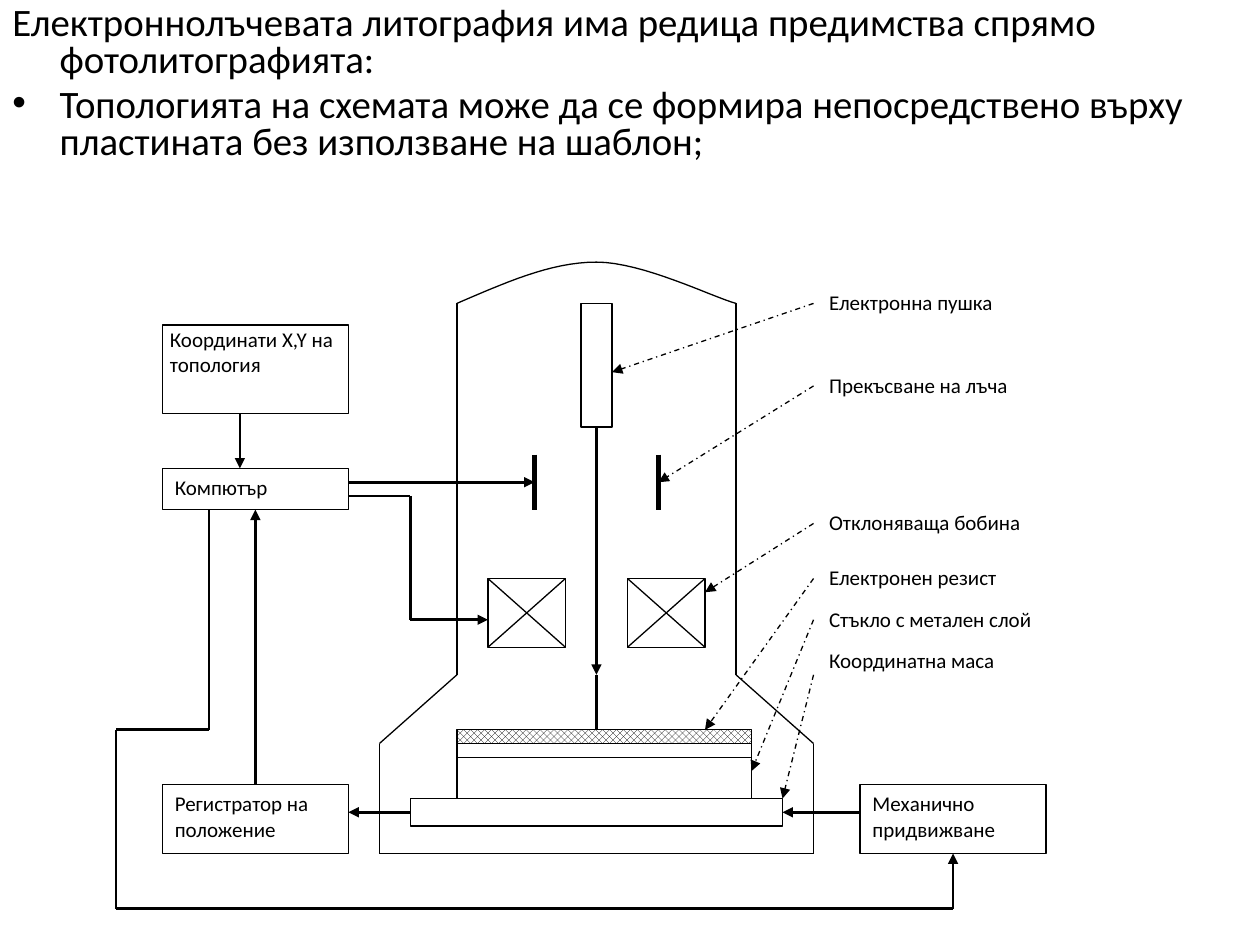
from lxml import etree
from pptx import Presentation
from pptx import util as u
from pptx.dml.color import RGBColor
from pptx.enum import dml, shapes, text
from pptx.oxml.ns import qn

THEME = {
    "font": "Calibri", "body": 22.2, "label": 12,
    "ink": RGBColor(0, 0, 0), "paper": RGBColor(255, 255, 255),
    "thin": 0.75, "beam": 1.25, "signal": 1.5, "plate": 3,
}
INTRO = [
    ("", "Електроннолъчевата литография има редица предимства спрямо фотолитографията:"),
    ("•", "Топологията на схемата може да се формира непосредствено върху пластината без използване на шаблон;"),
]

BOXES = [
    ((3, 4.57, 15, 11), "Координати X,Y на топология", (4.3, 0.7)),
    ((3, 15, 15, 18), "Компютър", (7.2, 3.6)),
    ((3, 38, 15, 43), "Регистратор на положение", (7.2, 3.6)),
    ((48, 38, 60, 43), "Механично придвижване", (7.2, 3.6)),
]
COILS = [(24, 23, 29, 28), (33, 23, 38, 28)]
GUN, STAGE, GLASS = (30, 3, 32, 12), (19, 39, 43, 41), (22, 35, 41, 39)
RESIST = (22, 34, 41, 35)
LABELS = [
    ("Електронна пушка", 2, (45, 3), (32, 8)),
    ("Прекъсване на лъча", 8, (45, 9), (35, 16)),
    ("Отклоняваща бобина", 18, (45, 19), (38, 24)),
    ("Електронен резист", 22, (45, 23), (38, 34)),
    ("Стъкло с метален слой", 25, (45, 26), (41, 37)),
    ("Координатна маса", 28, (45, 30), (43, 39)),
]
DOME = [
    ((22, 3), (25, 1.56), (28, 0), (31, 0)),
    ((31, 0), (34, 0), (38.5, 2.55), (40, 3)),
]
CHAMBER = [(22, 3), (22, 30), (17, 35), (17, 43), (45, 43), (45, 35), (40, 30), (40, 3)]
METAL_LAYER = [(22, 36), (41, 36)]
PLATES = [[(27, 14), (27, 18)], [(35, 14), (35, 18)]]
BEAM = [[(31, 12), (31, 30)], [(31, 30), (31, 34)]]
SIGNALS = [
    [(48, 40), (43, 40)],
    [(19, 40), (15, 40)],
    [(9, 38), (9, 18)],
    [(8, 11), (8, 15)],
    [(6, 18), (6, 34), (0, 34), (0, 47), (54, 47), (54, 43)],
    [(15, 16), (27, 16)],
    [(15, 17), (19, 17), (19, 26), (24, 26)],
]

prs = Presentation()
prs.slide_width, prs.slide_height = u.Pt(720), u.Pt(540)
s = prs.slides.add_slide(prs.slide_layouts[6])
side_middles = {}


def grid(x, y):
    return u.Pt(66.2 + 8.86 * x), u.Pt(149.8 + 7.86 * y)


def style_text(p, size):
    for r in p.runs:
        r.font.name, r.font.size = THEME["font"], u.Pt(size)
        r.font.color.rgb = THEME["ink"]


def set_text(sp, words, margin_x, margin_y):
    tf = sp.text_frame
    tf.word_wrap = True
    tf.margin_left = tf.margin_right = u.Pt(margin_x)
    tf.margin_top = tf.margin_bottom = u.Pt(margin_y)
    tf.vertical_anchor = text.MSO_ANCHOR.TOP
    tf.text = words
    tf.paragraphs[0].alignment = text.PP_ALIGN.LEFT
    style_text(tf.paragraphs[0], THEME["label"])


def add_rect(bounds):
    left, top, right, bottom = bounds
    (x1, y1), (x2, y2) = grid(left, top), grid(right, bottom)
    sp = s.shapes.add_shape(shapes.MSO_SHAPE.RECTANGLE, x1, y1, x2 - x1, y2 - y1)
    sp.shadow.inherit = False
    sp.fill.solid()
    sp.fill.fore_color.rgb = THEME["paper"]
    sp.line.color.rgb, sp.line.width = THEME["ink"], u.Pt(THEME["thin"])
    mid_x, mid_y = (left + right) / 2, (top + bottom) / 2
    for site, point in enumerate([(mid_x, top), (left, mid_y), (mid_x, bottom), (right, mid_y)]):
        side_middles[point] = (sp, site)
    return sp


def add_line(start, end, width, arrow=False, dash=None):
    c = s.shapes.add_connector(shapes.MSO_CONNECTOR.STRAIGHT, *grid(*start), *grid(*end))
    c.line.color.rgb, c.line.width = THEME["ink"], u.Pt(width)
    if dash:
        c.line.dash_style = dash
    spPr = c._element.spPr
    if arrow:
        etree.SubElement(spPr.find(qn("a:ln")), qn("a:tailEnd"), type="triangle")
    etree.SubElement(spPr, qn("a:effectLst"))
    if start in side_middles:
        c.begin_connect(*side_middles[start])
    if end in side_middles:
        c.end_connect(*side_middles[end])


def add_route(points, width, arrow=False):
    for i in range(len(points) - 1):
        add_line(points[i], points[i + 1], width, arrow and i == len(points) - 2)


def bezier(a, b, c, d, t):
    return tuple(
        (1 - t) ** 3 * a[i] + 3 * (1 - t) ** 2 * t * b[i] + 3 * (1 - t) * t ** 2 * c[i] + t ** 3 * d[i]
        for i in (0, 1)
    )


def add_dome():
    points = [grid(*bezier(*curve, n / 16)) for curve in DOME for n in range(17)]
    builder = s.shapes.build_freeform(*points[0])
    builder.add_line_segments(points[1:], close=False)
    sp = builder.convert_to_shape()
    sp.shadow.inherit = False
    sp.fill.background()
    sp.line.color.rgb, sp.line.width = THEME["ink"], u.Pt(THEME["thin"])


def add_intro():
    tf = s.shapes.add_textbox(0, 0, u.Pt(720), u.Pt(138)).text_frame
    tf.word_wrap = True
    for i, (bullet, words) in enumerate(INTRO):
        p = tf.add_paragraph() if i else tf.paragraphs[0]
        p.text = words
        p.line_spacing, p.space_before = 0.8, u.Pt(4.4)
        style_text(p, THEME["body"])
        pPr = p._p.get_or_add_pPr()
        pPr.set("marL", str(u.Pt(27)))
        pPr.set("indent", str(-u.Pt(27)))
        if bullet:
            etree.SubElement(pPr, qn("a:buFont"), typeface="Arial")
            etree.SubElement(pPr, qn("a:buChar"), char=bullet)


add_intro()
for bounds, words, margins in BOXES:
    set_text(add_rect(bounds), words, *margins)
add_dome()
add_route(CHAMBER, THEME["thin"])
for bounds in (STAGE, GLASS, GUN):
    add_rect(bounds)
add_line(*METAL_LAYER, THEME["thin"])
fill = add_rect(RESIST).fill
fill.patterned()
fill.pattern = dml.MSO_PATTERN.OUTLINED_DIAMOND
fill.fore_color.rgb, fill.back_color.rgb = THEME["ink"], THEME["paper"]
for left, top, right, bottom in COILS:
    add_rect((left, top, right, bottom))
    add_line((left, top), (right, bottom), THEME["thin"])
    add_line((right, top), (left, bottom), THEME["thin"])
for plate in PLATES:
    add_line(*plate, THEME["plate"])
add_line(*BEAM[0], THEME["beam"], arrow=True)
add_line(*BEAM[1], THEME["beam"])
for words, top, start, target in LABELS:
    set_text(s.shapes.add_textbox(*grid(46, top), u.Pt(145), u.Pt(23.6)), words, 0, 0)
    add_line(start, target, THEME["thin"], True, dml.MSO_LINE.DASH_DOT)
for route in SIGNALS:
    add_route(route, THEME["signal"], arrow=True)

prs.save("out.pptx")
